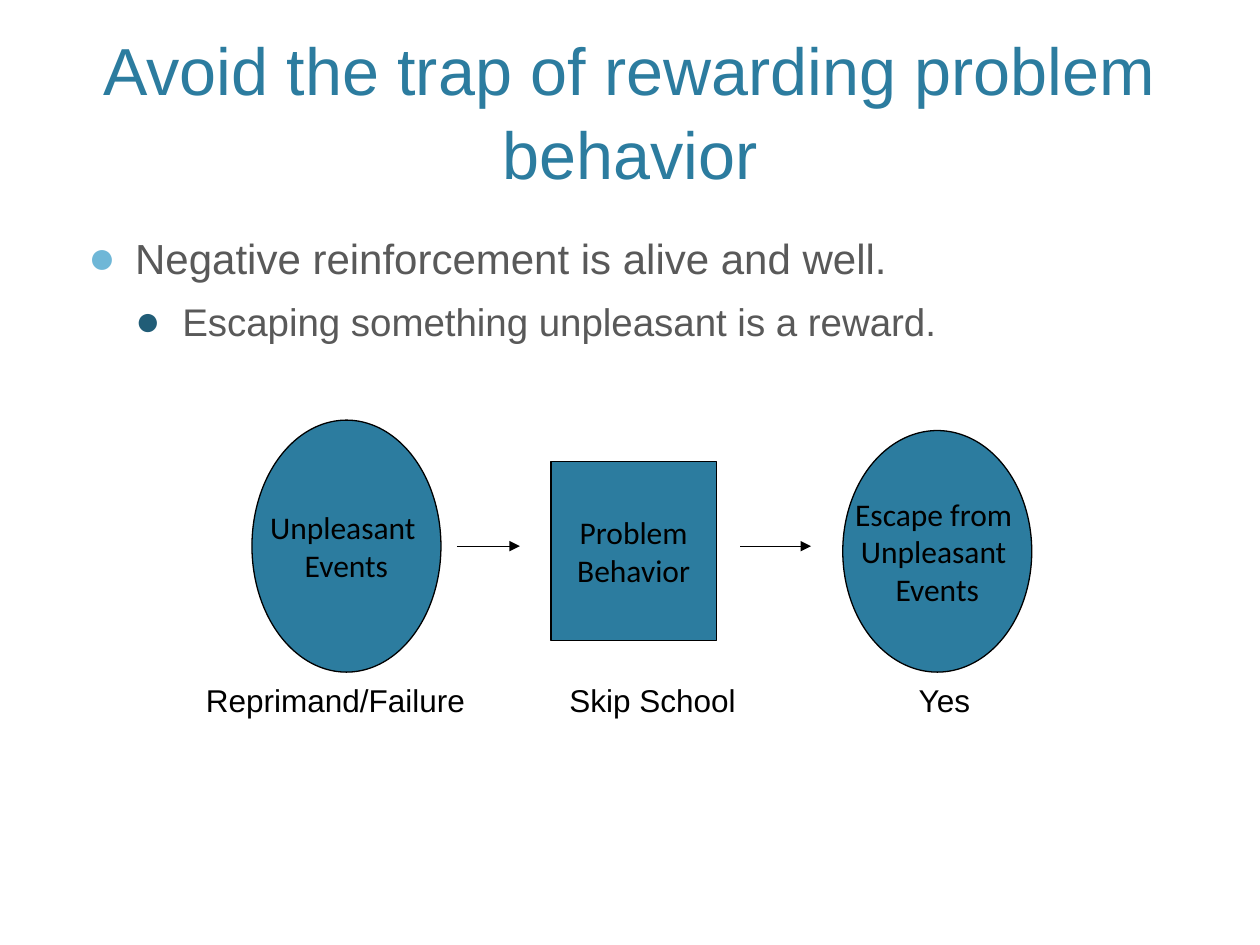
from pptx import Presentation
from pptx.dml.color import RGBColor
from pptx.enum.shapes import MSO_CONNECTOR, MSO_SHAPE
from pptx.enum.text import MSO_ANCHOR, MSO_AUTO_SIZE, PP_ALIGN
from pptx.oxml.ns import qn
from pptx.util import Cm, Pt
from lxml.etree import SubElement

TEAL = RGBColor(0x2C, 0x7C, 0x9F)
LIGHT_BLUE = RGBColor(0x6F, 0xB7, 0xD7)
DARK_BLUE = RGBColor(0x21, 0x5D, 0x77)
GREY = RGBColor(0x59, 0x59, 0x59)
BLACK = RGBColor(0, 0, 0)


def place(shape, left, top, width, height):
    shape.left, shape.top = Cm(left), Cm(top)
    shape.width, shape.height = Cm(width), Cm(height)


def write(paragraph, text, size, color=BLACK, font="Arial", align=PP_ALIGN.LEFT,
          spacing=None, before=0):
    run = paragraph.add_run()
    run.text = text
    run.font.size, run.font.name = Pt(size), font
    run.font.color.rgb = color
    paragraph.alignment = align
    paragraph.space_before = Pt(before)
    paragraph.line_spacing = spacing


def add_bullet(paragraph, color, margin, hanging):
    properties = paragraph._p.get_or_add_pPr()
    properties.set("marL", str(Cm(margin)))
    properties.set("indent", str(-Cm(hanging)))
    bullet_color = SubElement(properties, qn("a:buClr"))
    SubElement(bullet_color, qn("a:srgbClr"), val=str(color))
    SubElement(properties, qn("a:buSzPct"), val="110000")
    SubElement(properties, qn("a:buFont"), typeface="Arial")
    SubElement(properties, qn("a:buChar"), char="●")


def add_title(slide, text):
    title = slide.shapes.title
    place(title, 1.52, 0.3, 22.35, 3.71)
    frame = title.text_frame
    frame.auto_size = MSO_AUTO_SIZE.NONE
    frame.vertical_anchor = MSO_ANCHOR.BOTTOM
    write(frame.paragraphs[0], text, 38, TEAL, align=PP_ALIGN.CENTER, spacing=1.05)


def add_body(slide, items):
    body = slide.placeholders[1]
    place(body, 1.52, 4.45, 22.35, 12.07)
    frame = body.text_frame
    frame.auto_size = MSO_AUTO_SIZE.NONE
    for level, (text, size, before, color) in enumerate(items):
        paragraph = frame.add_paragraph() if level else frame.paragraphs[0]
        paragraph.level = level
        write(paragraph, text, size, GREY, spacing=1.1, before=before)
        add_bullet(paragraph, color, 0.95 * (level + 1), 0.95)


def add_step(slide, kind, lines, *box):
    shape = slide.shapes.add_shape(kind, *map(Cm, box))
    shape.shadow.inherit = False
    shape.fill.solid()
    shape.fill.fore_color.rgb = TEAL
    shape.line.color.rgb = BLACK
    shape.line.width = Pt(0.75)
    frame = shape.text_frame
    frame.word_wrap = False
    frame.vertical_anchor = MSO_ANCHOR.MIDDLE
    for index, line in enumerate(lines):
        paragraph = frame.add_paragraph() if index else frame.paragraphs[0]
        write(paragraph, line, 18, font="Calibri", align=PP_ALIGN.CENTER)


def add_arrow(slide, start, end, y):
    arrow = slide.shapes.add_connector(
        MSO_CONNECTOR.STRAIGHT, Cm(start), Cm(y), Cm(end), Cm(y))
    arrow.line.color.rgb = BLACK
    arrow.line.width = Pt(0.75)
    SubElement(arrow.line._get_or_add_ln(), qn("a:tailEnd"), type="triangle")
    SubElement(arrow._element.spPr, qn("a:effectLst"))


def add_examples(slide, examples, tab_stops):
    box = slide.shapes.add_textbox(Cm(3.02), Cm(13.61), Cm(17.37), Cm(1.02))
    frame = box.text_frame
    frame.word_wrap = True
    frame.margin_left = Cm(1.13)
    paragraph = frame.paragraphs[0]
    write(paragraph, "\t".join(examples), 18)
    tabs = SubElement(paragraph._p.get_or_add_pPr(), qn("a:tabLst"))
    for stop in tab_stops:
        SubElement(tabs, qn("a:tab"), pos=str(Cm(stop)), algn="l")


def main():
    presentation = Presentation()
    presentation.slide_width, presentation.slide_height = Cm(25.4), Cm(19.05)
    slide = presentation.slides.add_slide(presentation.slide_layouts[1])

    # Heading and bullets
    add_title(slide, "Avoid the trap of rewarding problem behavior")
    add_body(slide, [
        ("Negative reinforcement is alive and well.", 24, 20, LIGHT_BLUE),
        ("Escaping something unpleasant is a reward.", 22, 6, DARK_BLUE),
    ])

    # Chain from event to escape
    add_step(slide, MSO_SHAPE.OVAL, ["Unpleasant ", "Events"], 5.08, 8.47, 3.81, 5.08)
    add_arrow(slide, 9.21, 10.48, 11.01)
    add_step(slide, MSO_SHAPE.RECTANGLE, ["Problem", "Behavior"], 11.11, 9.31, 3.33, 3.6)
    add_arrow(slide, 14.92, 16.35, 11.01)
    add_step(slide, MSO_SHAPE.OVAL, ["Escape from ", "Unpleasant ", "Events"],
             16.99, 8.68, 3.81, 4.87)

    # Example under each step
    add_examples(slide, ["Reprimand/Failure", "Skip School", "Yes"], [7.33, 14.37])

    presentation.save("out.pptx")


if __name__ == "__main__":
    main()
